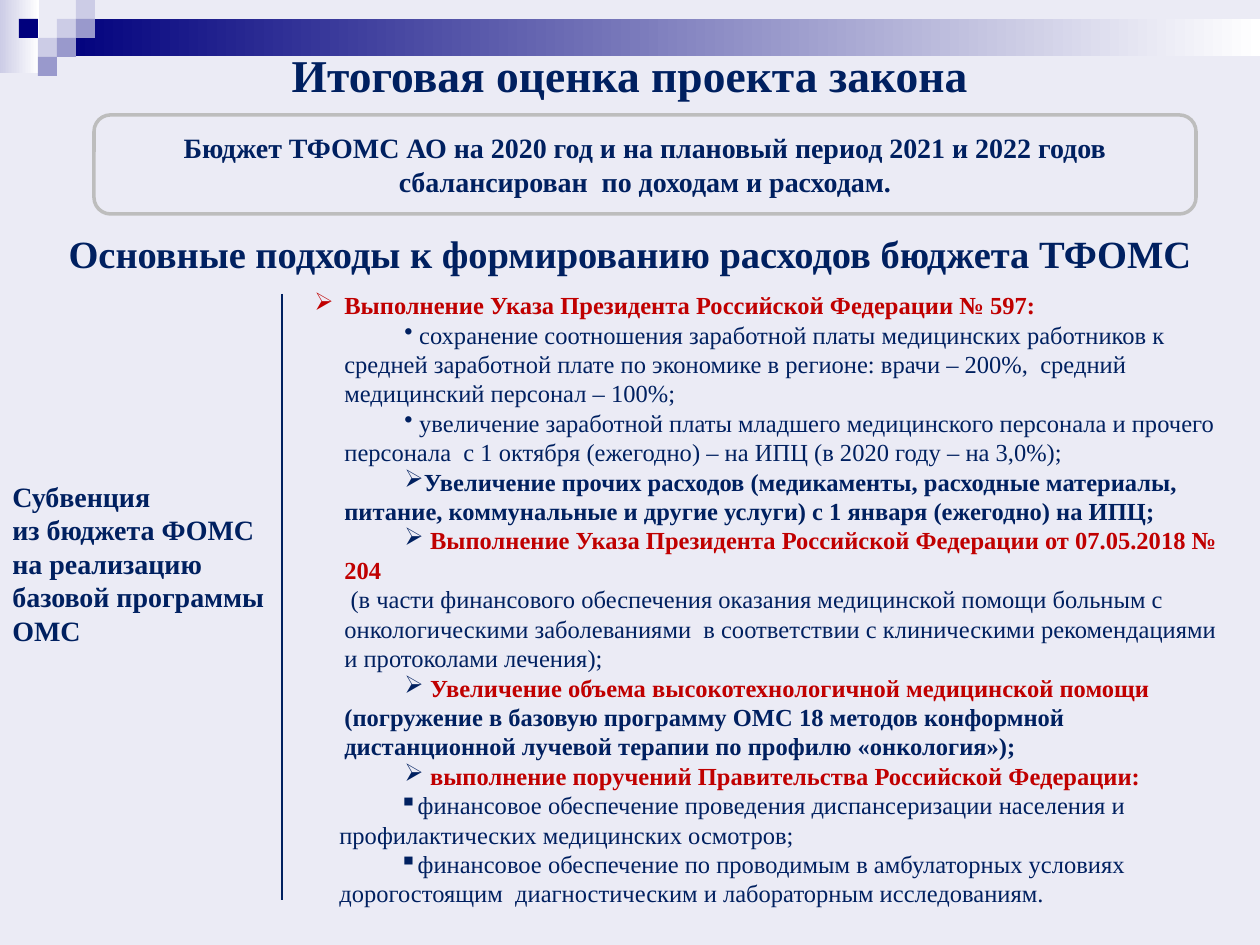
import pptx
import pptx.util
import pptx.dml.color
import pptx.enum.shapes
import pptx.enum.text
import pptx.oxml
import pptx.oxml.ns
import lxml.etree

RGBColor = pptx.dml.color.RGBColor
BACKGROUND = RGBColor(0xEB, 0xEB, 0xF5)
WHITE = RGBColor(0xFF, 0xFF, 0xFF)
LAVENDER = RGBColor(0xCC, 0xCC, 0xE6)
VIOLET = RGBColor(0x99, 0x99, 0xCC)
NAVY = RGBColor(0x00, 0x00, 0x7D)
INK = RGBColor(0x00, 0x20, 0x60)
RED = RGBColor(0xC0, 0x00, 0x00)
GREY = RGBColor(0xBD, 0xBD, 0xBD)

FONT = "Times New Roman"
TILE = 19
SHAPES = pptx.enum.shapes.MSO_SHAPE
ALIGN = pptx.enum.text.PP_ALIGN
ANCHOR = pptx.enum.text.MSO_ANCHOR

TILES = [
    (1, 1, LAVENDER), (2, 0, LAVENDER), (2, 1, VIOLET), (0, 2, LAVENDER),
    (-1, 1, NAVY), (1, 2, VIOLET), (0, 3, VIOLET),
]

HANGING = (30, -30)
INDENTED = (30, 60)
NESTED = (25, 60)
APPROACHES = [
    ("➢", HANGING, [("Выполнение Указа Президента Российской Федерации № 597:", RED, True)]),
    ("•", INDENTED, [(" сохранение соотношения заработной платы медицинских работников к средней "
                      "заработной плате по экономике в регионе: врачи – 200%,\u00a0 средний "
                      "медицинский персонал – 100%;", INK, False)]),
    ("•", INDENTED, [(" увеличение заработной платы младшего медицинского персонала и прочего "
                      "персонала  с 1 октября (ежегодно) – на ИПЦ (в 2020 году – на 3,0%);",
                      INK, False)]),
    ("➢", INDENTED, [("Увеличение прочих расходов (медикаменты, расходные материалы, питание, "
                      "коммунальные и другие услуги) с 1 января (ежегодно) на ИПЦ;", INK, True)]),
    ("➢", INDENTED, [(" ", INK, False),
                     ("Выполнение Указа Президента Российской Федерации от 07.05.2018 № 204 \v ",
                      RED, True),
                     ("(в части финансового обеспечения оказания медицинской помощи больным с "
                      "онкологическими заболеваниями  в соответствии с клиническими "
                      "рекомендациями и протоколами лечения);", INK, False)]),
    ("➢", INDENTED, [(" ", INK, False),
                     ("Увеличение объема высокотехнологичной медицинской помощи ", RED, True),
                     ("(погружение в базовую программу ОМС 18 методов конформной дистанционной "
                      "лучевой терапии по профилю «онкология»);", INK, True)]),
    ("➢", INDENTED, [(" ", INK, False),
                     ("выполнение поручений Правительства Российской Федерации:", RED, True)]),
    ("▪", NESTED, [("финансовое обеспечение проведения диспансеризации населения и "
                    "профилактических медицинских осмотров;", INK, False)]),
    ("▪", NESTED, [("финансовое обеспечение по проводимым в амбулаторных условиях "
                    "дорогостоящим  диагностическим и лабораторным исследованиям.",
                    INK, False)]),
]


def px(length):
    return pptx.util.Emu(round(length * 914400 / 126))


def set_attributes(target, values):
    for name, value in values.items():
        setattr(target, name, value)


def add_block(slide, box, color, end_color=None):
    shape = slide.shapes.add_shape(SHAPES.RECTANGLE, *map(px, box))
    shape.shadow.inherit = False
    shape.line.fill.background()
    if end_color is None:
        shape.fill.solid()
        shape.fill.fore_color.rgb = color
    else:
        shape.fill.gradient()
        shape.fill.gradient_angle = 0
        for stop, stop_color in zip(shape.fill.gradient_stops, (color, end_color)):
            stop.color.rgb = stop_color


def add_run(paragraph, text, size, color=INK, bold=True):
    first, *rest = text.split("\v")
    for index, part in enumerate([first, *rest]):
        if index:
            paragraph.add_line_break()
        run = paragraph.add_run()
        run.text = part
        set_attributes(run.font, {"name": FONT, "size": pptx.util.Pt(size), "bold": bold})
        run.font.color.rgb = color


def set_bullet(paragraph, character, margin, indent):
    properties = paragraph._p.get_or_add_pPr()
    properties.set("marL", str(px(margin)))
    properties.set("indent", str(px(indent)))
    bullet = lxml.etree.SubElement(properties, pptx.oxml.ns.qn("a:buChar"))
    bullet.set("char", character)


def next_paragraph(frame, index):
    return frame.add_paragraph() if index else frame.paragraphs[0]


def fill_text(frame, lines, size, alignment, anchor):
    set_attributes(frame, {"word_wrap": True, "vertical_anchor": anchor})
    for index, line in enumerate(lines):
        paragraph = next_paragraph(frame, index)
        paragraph.alignment = alignment
        add_run(paragraph, line, size)


def add_text(slide, box, lines, size, alignment=ALIGN.CENTER, anchor=ANCHOR.TOP):
    frame = slide.shapes.add_textbox(*map(px, box)).text_frame
    fill_text(frame, lines, size, alignment, anchor)


def add_frame(slide, box, line, size):
    shape = slide.shapes.add_shape(SHAPES.ROUNDED_RECTANGLE, *map(px, box))
    shape.shadow.inherit = False
    shape.fill.background()
    shape.line.color.rgb = GREY
    shape.line.width = pptx.util.Pt(2)
    fill_text(shape.text_frame, [line], size, ALIGN.CENTER, ANCHOR.MIDDLE)


def add_bullets(slide, box, items, size):
    frame = slide.shapes.add_textbox(*map(px, box)).text_frame
    frame.word_wrap = True
    for index, (character, indents, runs) in enumerate(items):
        paragraph = next_paragraph(frame, index)
        set_bullet(paragraph, character, *indents)
        for text, color, bold in runs:
            add_run(paragraph, text, size, color, bold)


def add_divider(slide, x, top, bottom):
    connector = slide.shapes.add_connector(
        pptx.enum.shapes.MSO_CONNECTOR.STRAIGHT, px(x), px(top), px(x), px(bottom))
    connector.line.color.rgb = INK
    connector.line.width = pptx.util.Pt(0.75)
    lxml.etree.SubElement(connector._element.spPr, pptx.oxml.ns.qn("a:effectLst"))


def add_header(slide):
    add_block(slide, (0, 0, 39, 73), LAVENDER, WHITE)
    add_block(slide, (57, 19, 1203, 37), NAVY, WHITE)
    for column, row, color in TILES:
        add_block(slide, (38 + column * TILE, row * TILE, TILE, TILE), color)


def main():
    presentation = pptx.Presentation()
    set_attributes(presentation, {"slide_width": px(1260), "slide_height": px(945)})
    slide = presentation.slides.add_slide(presentation.slide_layouts[6])
    slide.background.fill.solid()
    slide.background.fill.fore_color.rgb = BACKGROUND
    add_header(slide)
    add_text(slide, (63, 45, 1134, 59), ["Итоговая оценка проекта закона"], 26,
             anchor=ANCHOR.MIDDLE)
    add_frame(slide, (94, 115, 1102, 99),
              "Бюджет ТФОМС АО на 2020 год и на плановый период 2021 и 2022 годов "
              "сбалансирован  по доходам и расходам.", 16)
    add_text(slide, (0, 224, 1260, 59),
             ["Основные подходы к формированию расходов бюджета ТФОМС"], 22)
    add_text(slide, (0, 473, 302, 183),
             ["Субвенция", "из бюджета ФОМС", "на реализацию \vбазовой программы ОМС"],
             16, ALIGN.LEFT)
    add_bullets(slide, (302, 284, 932, 606), APPROACHES, 14)
    add_divider(slide, 282, 294, 900)
    presentation.save("out.pptx")


if __name__ == "__main__":
    main()
